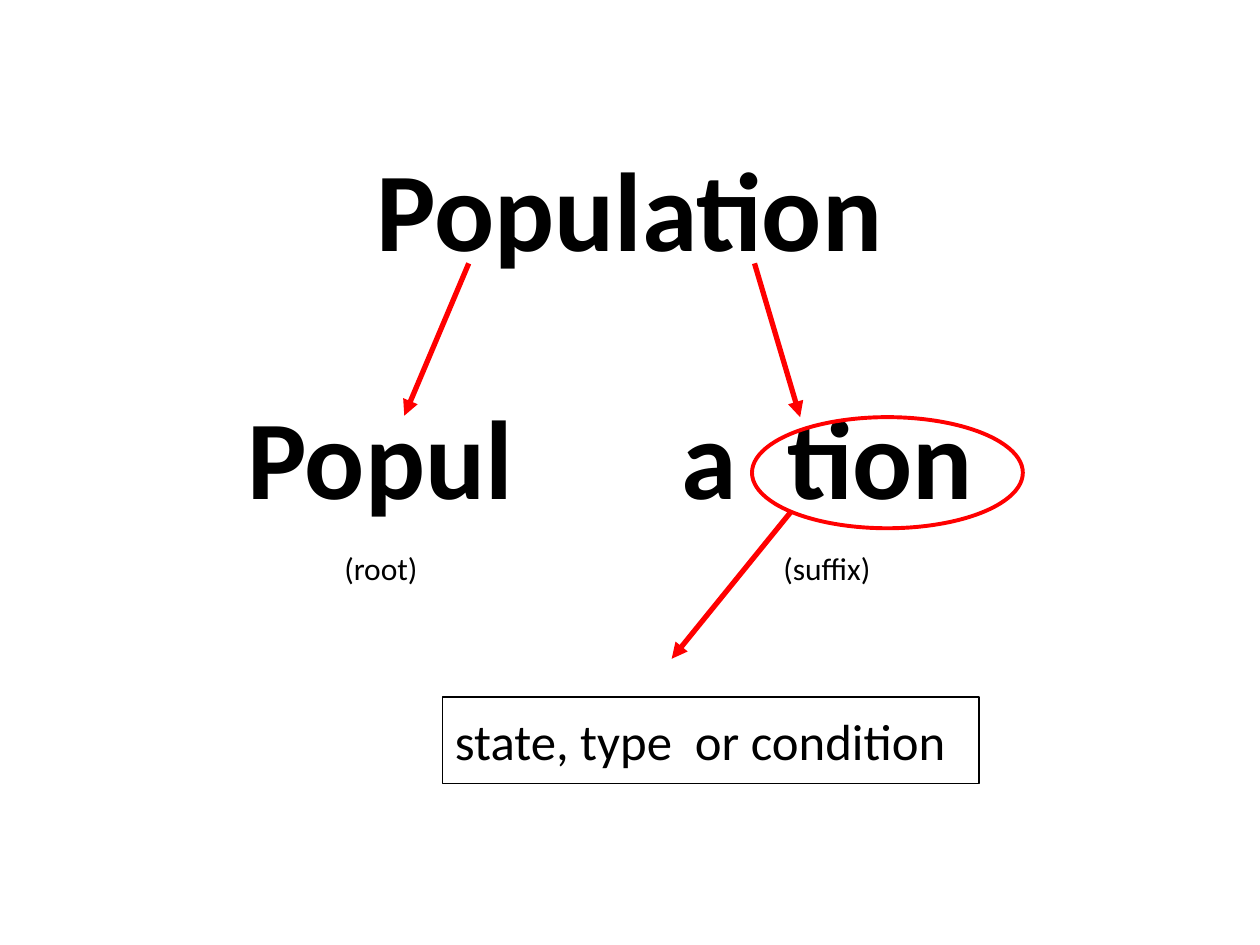
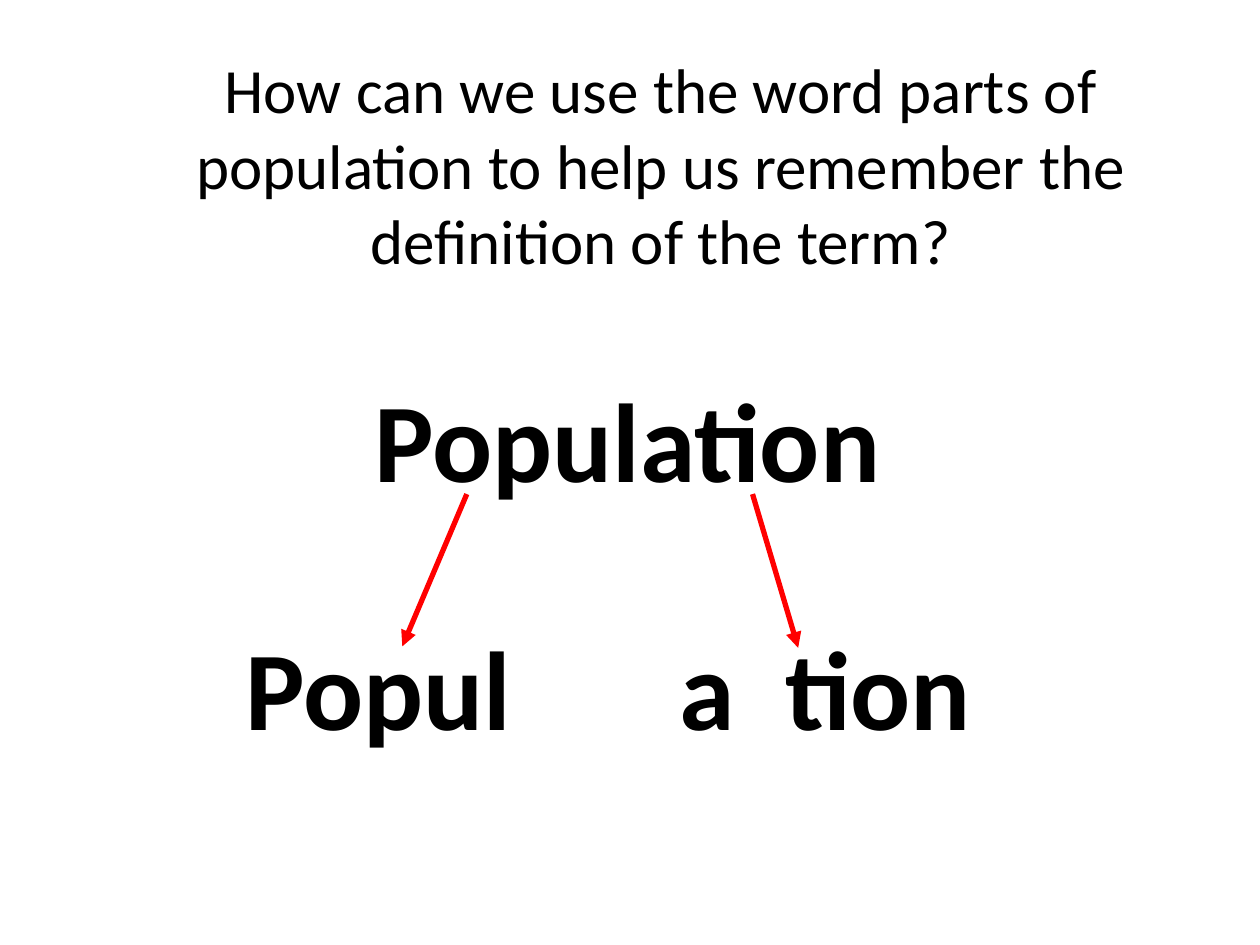
from typing import NamedTuple

from lxml.etree import SubElement
from pptx import Presentation
from pptx.dml.color import RGBColor
from pptx.enum.shapes import MSO_CONNECTOR, MSO_SHAPE
from pptx.enum.text import MSO_ANCHOR, MSO_AUTO_SIZE, PP_ALIGN
from pptx.oxml.ns import qn
from pptx.util import Cm, Pt

BLACK, RED = "000000", "FF0000"
FONT = "Calibri"
BIG = {"size": Pt(64), "bold": True}
ASK = {"size": Pt(36), "bold": False}
NOTE = {"size": Pt(18), "bold": False}
SENSE = {"size": Pt(29), "bold": False}


class Label(NamedTuple):
    """Text with its box, in centimetres."""
    text: str
    left: float
    top: float
    width: float
    height: float
    style: dict
    align: PP_ALIGN = PP_ALIGN.CENTER
    pad: float = 0.25


class Arrow(NamedTuple):
    """Start and end points, in centimetres."""
    x1: float
    y1: float
    x2: float
    y2: float


# The word and its parts, as placed on the first slide
WORD = Label("Population", 5.21, 2.57, 14.96, 3.25, BIG)
PARTS = [
    Label("Popul", 4.04, 7.57, 7.24, 3.25, BIG),
    Label("a  tion", 11.91, 7.57, 9.53, 3.25, BIG),
]
SPLITS = [Arrow(9.45, 5.31, 8.15, 8.38), Arrow(15.21, 5.31, 16.13, 8.41)]
SHIFT = (-0.04, 4.65)

# Texts of a single slide
ROLES = [
    Label("(root)", 6.17, 10.82, 3.02, 0.81, NOTE),
    Label("(suffix)", 15.16, 10.82, 3.02, 0.81, NOTE),
]
MEANING = Label("state, type  or condition", 8.92, 14.05, 10.82, 1.75,
                SENSE, PP_ALIGN.LEFT)
QUERY = Label("How can we use the word parts of population to help us "
              "remember the definition of the term?",
              2.03, 0.89, 22.58, 4.88, ASK, pad=0.13)


def color(code: str) -> RGBColor:
    return RGBColor.from_string(code)


def apply(target, values: dict) -> None:
    for name, value in values.items():
        setattr(target, name, value)


def edge(shape, code: str, width: float) -> None:
    apply(shape.line, {"width": Pt(width)})
    shape.line.color.rgb = color(code)


def write(shape, label: Label) -> None:
    """Place a shape and fill it with the label's text."""
    apply(shape, {"left": Cm(label.left), "top": Cm(label.top),
                  "width": Cm(label.width), "height": Cm(label.height)})
    frame = shape.text_frame
    frame.text = label.text
    apply(frame, {"word_wrap": True, "auto_size": MSO_AUTO_SIZE.NONE,
                  "vertical_anchor": MSO_ANCHOR.TOP,
                  "margin_left": Cm(0.25), "margin_right": Cm(0.25),
                  "margin_top": Cm(label.pad), "margin_bottom": Cm(label.pad)})
    line = frame.paragraphs[0]
    line.alignment = label.align
    font = line.runs[0].font
    apply(font, {"name": FONT, **label.style})
    font.color.rgb = color(BLACK)


def add_label(slide, label: Label) -> None:
    write(slide.shapes.add_textbox(0, 0, 0, 0), label)


def add_arrow(slide, arrow: Arrow) -> None:
    link = slide.shapes.add_connector(MSO_CONNECTOR.STRAIGHT, *map(Cm, arrow))
    edge(link, RED, 3)
    SubElement(link.line._get_or_add_ln(), qn("a:tailEnd"), type="triangle")
    SubElement(link._element.spPr, qn("a:effectLst"))


def add_frame(slide, kind: MSO_SHAPE, box: tuple, code: str, width: float):
    shape = slide.shapes.add_shape(kind, *map(Cm, box))
    shape.shadow.inherit = False
    shape.fill.background()
    edge(shape, code, width)
    return shape


def move(label: Label, dx: float, dy: float) -> Label:
    return label._replace(left=label.left + dx, top=label.top + dy)


def add_split(slide, dx: float = 0, dy: float = 0) -> None:
    """Draw the arrows from the word and the parts they reach."""
    for x1, y1, x2, y2 in SPLITS:
        add_arrow(slide, Arrow(x1 + dx, y1 + dy, x2 + dx, y2 + dy))
    for part in PARTS:
        add_label(slide, move(part, dx, dy))


def add_slide(deck, title: Label):
    slide = deck.slides.add_slide(deck.slide_layouts[5])
    write(slide.shapes.title, title)
    return slide


def main() -> None:
    deck = Presentation()
    apply(deck, {"slide_width": Cm(25.4), "slide_height": Cm(19.05)})

    # Word parts and the sense of the suffix
    slide = add_slide(deck, WORD)
    add_split(slide)
    for role in ROLES:
        add_label(slide, role)
    add_frame(slide, MSO_SHAPE.OVAL, (15.16, 8.41, 5.46, 2.24), RED, 2.25)
    add_arrow(slide, Arrow(15.95, 10.31, 13.54, 13.28))
    box = add_frame(slide, MSO_SHAPE.RECTANGLE, MEANING[1:5], BLACK, 0.75)
    write(box, MEANING)

    # Question above the same word
    slide = add_slide(deck, QUERY)
    add_label(slide, move(WORD, *SHIFT))
    add_split(slide, *SHIFT)

    deck.save("out.pptx")


if __name__ == "__main__":
    main()
